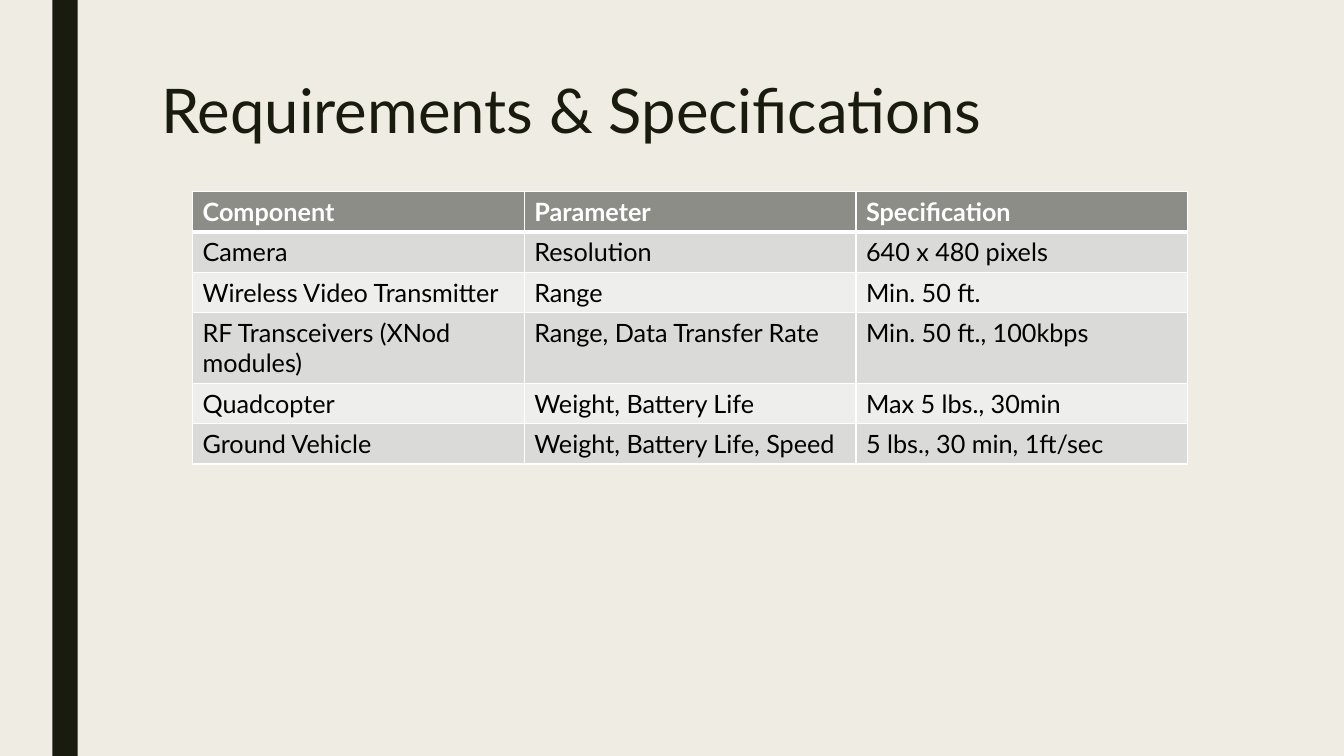
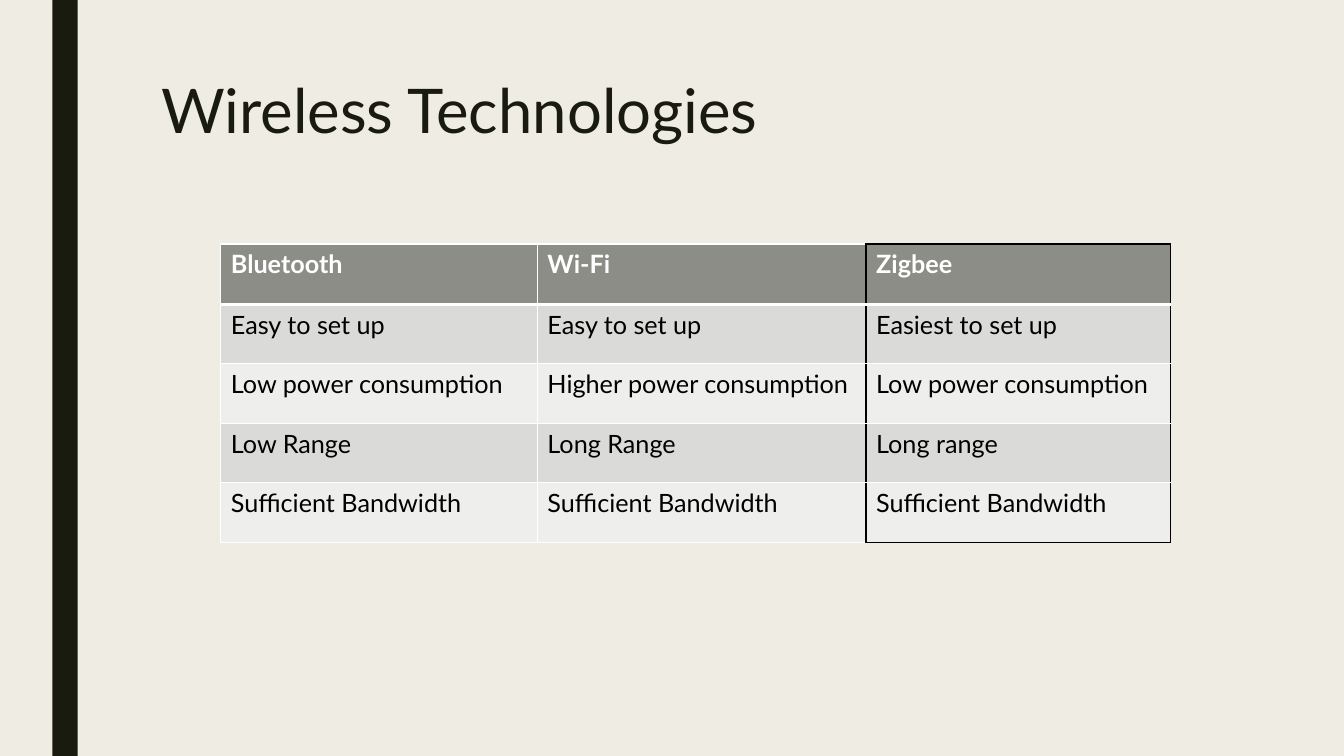
"""Build two table slides on requirements and wireless technologies."""
from lxml import etree
from pptx import Presentation
from pptx import util as u
from pptx.dml.color import RGBColor
from pptx.enum import shapes, text
from pptx.oxml.ns import qn

PAPER = RGBColor(0xEF, 0xED, 0xE3)
DARK = RGBColor(0x19, 0x1B, 0x0E)
HEADER = RGBColor(0x8C, 0x8D, 0x86)
BANDS = RGBColor(0xEE, 0xEE, 0xED), RGBColor(0xDA, 0xDB, 0xD9)
WHITE = RGBColor(0xFF, 0xFF, 0xFF)
BLACK = RGBColor(0, 0, 0)
FONT = "Lato"


class Deck:
    def __init__(self):
        self.prs = Presentation()
        self.prs.slide_width, self.prs.slide_height = u.Inches(13.33), u.Inches(7.5)
        self.s = None

    def slide(self, title):
        self.s = self.prs.slides.add_slide(self.prs.slide_layouts[6])
        fill = self.s.background.fill
        fill.solid()
        fill.fore_color.rgb = PAPER
        self.band()
        self.title(title)

    def band(self):
        sp = self.s.shapes.add_shape(shapes.MSO_SHAPE.RECTANGLE, u.Inches(0.52), 0,
                                     u.Inches(0.25), self.prs.slide_height)
        sp.shadow.inherit = False
        sp.fill.solid()
        sp.fill.fore_color.rgb = DARK
        sp.line.fill.background()

    def title(self, words):
        sp = self.s.shapes.add_textbox(*map(u.Inches, (1.5, 0.75, 10.5, 1.62)))
        tf = sp.text_frame
        tf.word_wrap = True
        tf.vertical_anchor = text.MSO_ANCHOR.TOP
        tf.paragraphs[0].line_spacing = 0.89
        self.run(tf.paragraphs[0], words, 44, DARK)

    def run(self, p, words, size, color, bold=False):
        r = p.add_run()
        r.text = words
        r.font.name, r.font.size, r.font.bold = FONT, u.Pt(size), bold
        r.font.color.rgb = color

    def border(self, cell, side, color, width):
        ln = etree.SubElement(cell._tc.get_or_add_tcPr(), qn(f"a:ln{side}"), w=str(u.Pt(width)))
        fill = etree.SubElement(ln, qn("a:solidFill"))
        etree.SubElement(fill, qn("a:srgbClr"), val=str(color))

    def table(self, left, top, widths, heights, rows, boxed=None):
        tb = self.s.shapes.add_table(len(rows), len(widths), *map(
            u.Inches, (left, top, sum(widths), sum(heights)))).table
        tb.horz_banding = False
        for col, width in zip(tb.columns, widths):
            col.width = u.Inches(width)
        last = len(rows) - 1
        for i, (row, height) in enumerate(zip(rows, heights)):
            tb.rows[i].height = u.Inches(height)
            for j, words in enumerate(row):
                cell, box = tb.cell(i, j), j == boxed
                edges = {
                    "L": (BLACK if box else WHITE, 1),
                    "R": (BLACK if boxed in (j, j + 1) else WHITE, 1),
                    "T": (BLACK if box and i == 0 else WHITE, 3 if i == 1 else 1),
                    "B": (BLACK if box and i == last else WHITE, 3 if i == 0 else 1),
                }
                for side, (color, width) in edges.items():
                    self.border(cell, side, color, width)
                cell.fill.solid()
                cell.fill.fore_color.rgb = BANDS[i % 2] if i else HEADER
                self.run(cell.text_frame.paragraphs[0], words, 18,
                         BLACK if i else WHITE, bold=i == 0)


def main():
    deck = Deck()
    deck.slide("Requirements & Specifications")
    deck.table(1.91, 1.9, [3.29] * 3, [0.4, 0.4, 0.4, 0.7, 0.4, 0.4], [
        ("Component", "Parameter", "Specification"),
        ("Camera", "Resolution", "640 x 480 pixels"),
        ("Wireless Video Transmitter", "Range", "Min. 50 ft."),
        ("RF Transceivers (XNod modules)", "Range, Data Transfer Rate", "Min. 50 ft., 100kbps"),
        ("Quadcopter", "Weight, Battery Life", "Max 5 lbs., 30min"),
        ("Ground Vehicle", "Weight, Battery Life, Speed", "5 lbs., 30 min, 1ft/sec"),
    ])
    deck.slide("Wireless Technologies")
    deck.table(2.19, 2.42, [3.14, 3.26, 3.02], [0.6] + [0.59] * 4, [
        ("Bluetooth", "Wi-Fi", "Zigbee"),
        ("Easy to set up", "Easy to set up", "Easiest to set up"),
        ("Low power consumption", "Higher power consumption", "Low power consumption"),
        ("Low Range", "Long Range", "Long range"),
        ("Sufficient Bandwidth",) * 3,
    ], boxed=2)
    deck.prs.save("out.pptx")


if __name__ == "__main__":
    main()
